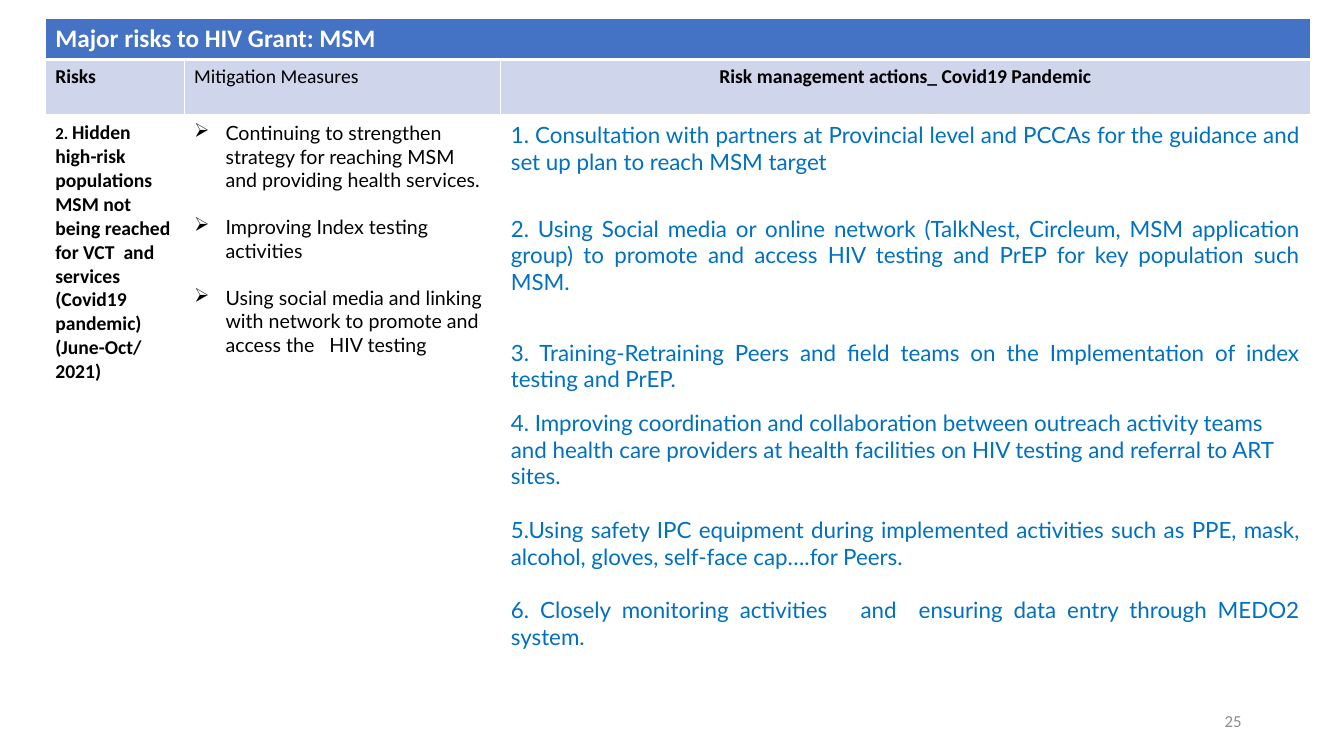
from lxml import etree
from pptx import Presentation, util as u
from pptx.dml.color import RGBColor
from pptx.enum import text
from pptx.oxml.ns import qn

COLORS = {
    "white": "FFFFFF",
    "black": "000000",
    "title": "4472C4",
    "header": "CFD5EA",
    "action": "0070C0",
    "number": "8C8C8C",
}

MITIGATION_MEASURES = [
    "Continuing to strengthen strategy for reaching MSM and providing health services.",
    "Improving Index testing activities",
    "Using social media and linking  with network to promote and access the   HIV testing",
]

# (text, space before in points, alignment, automatic number)
LEFT, JUSTIFY = text.PP_ALIGN.LEFT, text.PP_ALIGN.JUSTIFY
ACTIONS = [
    (" Consultation with partners at Provincial level and PCCAs for the guidance "
     "and set up plan to reach MSM target", 0, JUSTIFY, 1),
    (" Using Social media or online network (TalkNest, Circleum, MSM application "
     "group) to promote and access HIV testing and PrEP for key population such MSM.",
     28.8, JUSTIFY, 2),
    ("3. Training-Retraining Peers and field teams on the Implementation of index "
     "testing and PrEP.", 31.2, JUSTIFY, None),
    ("4. Improving coordination and collaboration between outreach activity teams  "
     "and health care providers at health facilities on HIV testing and referral to "
     "ART sites.", 12, LEFT, None),
    ("5.Using safety IPC equipment during implemented activities such as PPE, mask, "
     "alcohol, gloves, self-face cap….for Peers.", 19.2, JUSTIFY, None),
    ("6. Closely monitoring activities   and  ensuring data entry through MEDO2 system.",
     19.2, JUSTIFY, None),
]


class RiskSlide:
    def __init__(self, presentation):
        self.slide = presentation.slides.add_slide(presentation.slide_layouts[6])
        self.heading_font = "Calibri"
        self.list_font = "Lato"

    def table(self, left, top, column_widths, row_heights):
        shape = self.slide.shapes.add_table(
            len(row_heights), len(column_widths), u.Cm(left), u.Cm(top),
            u.Cm(sum(column_widths)), u.Cm(sum(row_heights)))
        table = shape.table
        table.horz_banding = False
        for column, width in zip(table.columns, column_widths):
            column.width = u.Cm(width)
        for row, height in zip(table.rows, row_heights):
            row.height = u.Cm(height)
        return table

    def fill(self, cell, color=None):
        """Fill a cell, or clear its fill when no color is given."""
        if color:
            cell.fill.solid()
            cell.fill.fore_color.rgb = RGBColor.from_string(COLORS[color])
        else:
            cell.fill.background()

    def border(self, cell, side, points):
        """Draw a white border on one side: a:lnT or a:lnB."""
        properties = cell._tc.get_or_add_tcPr()
        line = etree.Element(qn(side), w=str(u.Pt(points)))
        solid = etree.SubElement(line, qn("a:solidFill"))
        etree.SubElement(solid, qn("a:srgbClr"), val=COLORS["white"])
        properties.insert(0, line)

    def paragraph(self, frame, content, size, font=None, color="black", bold=False,
                  align=LEFT, before=0, bullet=None, number=None):
        """Write into the empty first paragraph, or add one after it."""
        paragraph = frame.paragraphs[0]
        if paragraph.runs:
            paragraph = frame.add_paragraph()
        paragraph.add_run().text = content
        paragraph.alignment = align
        paragraph.space_before = u.Pt(before)
        properties = paragraph._p.get_or_add_pPr()
        if bullet:
            indent = u.Cm(0.79)
            properties.set("marL", str(indent))
            properties.set("indent", str(-indent))
            etree.SubElement(properties, qn("a:buChar"), char=bullet)
        elif number:
            etree.SubElement(properties, qn("a:buAutoNum"),
                             type="arabicPeriod", startAt=str(number))
        paragraph.font.name = font or self.heading_font
        paragraph.font.size = u.Pt(size)
        paragraph.font.bold = bold
        paragraph.font.color.rgb = RGBColor.from_string(COLORS[color])
        return paragraph

    def slide_number(self, number, left, top, width, height):
        frame = self.slide.shapes.add_textbox(
            u.Cm(left), u.Cm(top), u.Cm(width), u.Cm(height)).text_frame
        frame.word_wrap = True
        frame.vertical_anchor = text.MSO_ANCHOR.MIDDLE
        self.paragraph(frame, number, 12, color="number", align=text.PP_ALIGN.RIGHT)


def main():
    presentation = Presentation()
    presentation.slide_width = u.Cm(33.87)
    presentation.slide_height = u.Cm(19.05)
    risks = RiskSlide(presentation)

    table = risks.table(1.14, 0.47, [3.5, 7.98, 20.4], [1, 1.43, 15.5])
    title = table.cell(0, 0)
    title.merge(table.cell(0, 2))
    risks.fill(title, "title")
    risks.paragraph(title.text_frame, "Major risks to HIV Grant: MSM", 18,
                    color="white", bold=True)

    headers = [
        ("Risks", True, LEFT),
        ("Mitigation Measures", False, LEFT),
        ("Risk management actions_ Covid19 Pandemic", True, text.PP_ALIGN.CENTER),
    ]
    for column, (label, bold, align) in enumerate(headers):
        header = table.cell(1, column)
        risks.fill(header, "header")
        risks.paragraph(header.text_frame, label, 14, bold=bold, align=align)
        risks.border(table.cell(0, column), "a:lnB", 3)
        risks.border(header, "a:lnT", 3)
        risks.fill(table.cell(2, column))

    risk, measures, actions = (table.cell(2, column).text_frame for column in range(3))
    hidden = risks.paragraph(risk, "2. ", 14, bold=True)
    hidden.runs[0].font.size = u.Pt(12)
    hidden.add_run().text = ("Hidden high-risk populations MSM not being reached "
                             "for VCT  and services (Covid19 pandemic)")
    risks.paragraph(risk, "(June-Oct/2021)", 14, bold=True)

    for index, measure in enumerate(MITIGATION_MEASURES):
        risks.paragraph(measures, measure, 14, font=risks.list_font,
                        before=16.8 if index else 0, bullet="➢")
    for action, before, align, number in ACTIONS:
        risks.paragraph(actions, action, 16, font=risks.list_font, color="action",
                        align=align, before=before, number=number)

    risks.slide_number("25", 23.92, 17.66, 7.62, 1.01)
    presentation.save("out.pptx")


if __name__ == "__main__":
    main()
